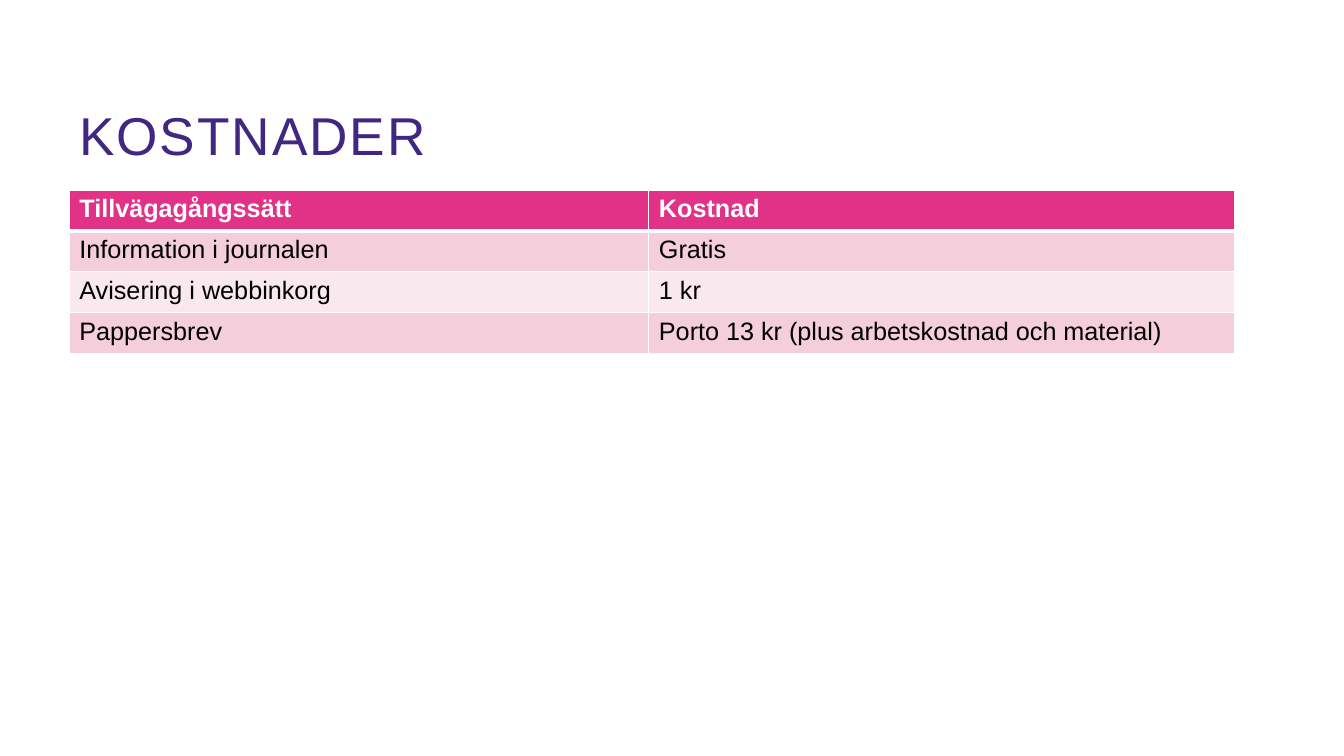
from dataclasses import dataclass

from lxml.etree import SubElement
from pptx import Presentation
from pptx.dml.color import RGBColor
from pptx.enum.text import MSO_ANCHOR
from pptx.oxml.ns import qn
from pptx.slide import Slide
from pptx.table import _Cell
from pptx.text.text import _Paragraph, _Run
from pptx.util import Emu, Pt


@dataclass(frozen=True)
class Theme:
    font: str = "Arial"
    title: str = "412682"
    header: str = "E13288"
    bands: tuple[str, str] = ("F4CEDA", "F9E8ED")
    text: str = "000000"
    white: str = "FFFFFF"
    title_pt: int = 38
    cell_pt: int = 18
    title_spacing: int = 140
    border_pt: int = 1
    header_border_pt: int = 3


@dataclass(frozen=True)
class CostRow:
    method: str
    cost: str


THEME = Theme()
EMU_PER_PX = 9525
SLIDE_SIZE = (1280, 720)
LEFT = 66
TABLE_TOP = 181
COLUMN_WIDTHS = (552, 558)
ROW_HEIGHT = 39
ROWS = (
    CostRow("Tillvägagångssätt", "Kostnad"),
    CostRow("Information i journalen", "Gratis"),
    CostRow("Avisering i webbinkorg", "1 kr"),
    CostRow("Pappersbrev", "Porto 13 kr (plus arbetskostnad och material)"),
)


def px(n: int) -> Emu:
    return Emu(n * EMU_PER_PX)


def add_run(p: _Paragraph, text: str, size: int, color: str, bold: bool = False) -> _Run:
    r = p.add_run()
    r.text = text
    r.font.name = THEME.font
    r.font.size = Pt(size)
    r.font.bold = bold
    r.font.color.rgb = RGBColor.from_string(color)
    return r


def add_border(cell: _Cell, side: str, width: int) -> None:
    props = cell._tc.get_or_add_tcPr()
    line = SubElement(props, qn(f"a:ln{side}"), w=str(Pt(width)))
    fill = SubElement(line, qn("a:solidFill"))
    SubElement(fill, qn("a:srgbClr"), val=THEME.white)


def draw_title(s: Slide, text: str) -> None:
    tf = s.shapes.add_textbox(px(LEFT), px(24), px(1016), px(139)).text_frame
    tf.word_wrap = True
    tf.vertical_anchor = MSO_ANCHOR.BOTTOM
    r = add_run(tf.paragraphs[0], text, THEME.title_pt, THEME.title)
    r.font._element.set("spc", str(THEME.title_spacing))


def draw_cell(cell: _Cell, text: str, row: int) -> None:
    header = row == 0
    header_edges = {(0, "B"), (1, "T")}
    for side in "LRTB":
        thick = (row, side) in header_edges
        add_border(cell, side, THEME.header_border_pt if thick else THEME.border_pt)
    cell.fill.solid()
    color = THEME.header if header else THEME.bands[(row - 1) % 2]
    cell.fill.fore_color.rgb = RGBColor.from_string(color)
    p = cell.text_frame.paragraphs[0]
    add_run(p, text, THEME.cell_pt, THEME.white if header else THEME.text, header)


def draw_table(s: Slide, rows: tuple[CostRow, ...]) -> None:
    table = s.shapes.add_table(
        len(rows), len(COLUMN_WIDTHS), px(LEFT), px(TABLE_TOP),
        px(sum(COLUMN_WIDTHS)), px(ROW_HEIGHT * len(rows)),
    ).table
    for column, width in zip(table.columns, COLUMN_WIDTHS):
        column.width = px(width)
    for i, row in enumerate(rows):
        table.rows[i].height = px(ROW_HEIGHT)
        for j, text in enumerate((row.method, row.cost)):
            draw_cell(table.cell(i, j), text, i)


def main() -> None:
    prs = Presentation()
    prs.slide_width, prs.slide_height = map(px, SLIDE_SIZE)
    s = prs.slides.add_slide(prs.slide_layouts[6])
    draw_table(s, ROWS)
    draw_title(s, "KOSTNADER")
    prs.save("out.pptx")


if __name__ == "__main__":
    main()
